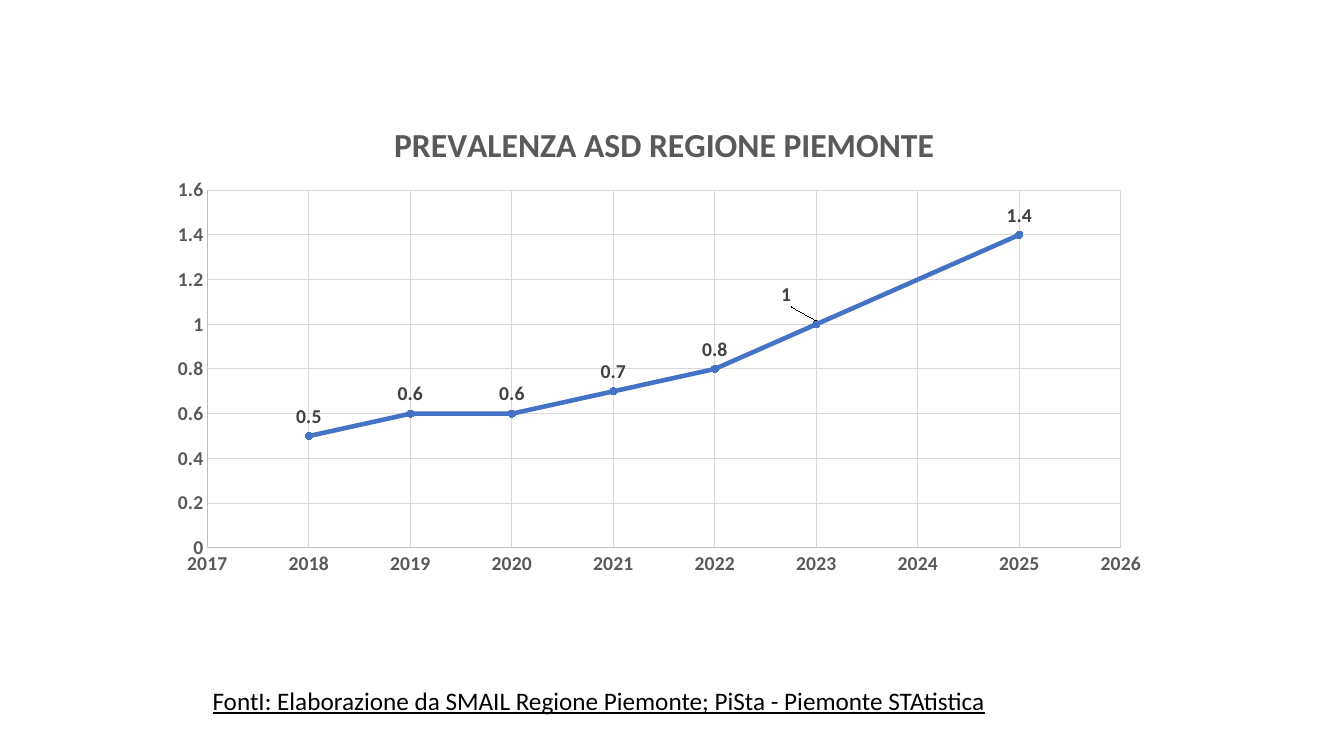
from dataclasses import dataclass

from lxml.etree import SubElement
from pptx import Presentation
from pptx.chart.data import XyChartData
from pptx.chart.datalabel import DataLabels
from pptx.dml.color import RGBColor
from pptx.enum.chart import XL_CHART_TYPE, XL_LABEL_POSITION, XL_MARKER_STYLE, XL_TICK_MARK
from pptx.enum.text import MSO_AUTO_SIZE
from pptx.oxml.ns import qn
from pptx.util import Pt


@dataclass(frozen=True)
class Theme:
    font: str = "Calibri"
    text: str = "000000"
    muted: str = "595959"
    label: str = "404040"
    accent: str = "4472C4"
    axis: str = "BFBFBF"
    grid: str = "D9D9D9"
    title_size: int = 24
    source_size: int = 18
    chart_size: int = 14


class SlideBuilder:
    def __init__(self, slide, theme):
        self.slide = slide
        self.theme = theme

    def style_font(self, font, size, color, bold=False):
        font.name = self.theme.font
        font.size = Pt(size)
        font.bold = bold
        font.color.rgb = RGBColor.from_string(color)

    def style_line(self, line, color, width=0.75):
        line.color.rgb = RGBColor.from_string(color)
        line.width = Pt(width)

    def set_layout(self, parent, index, **values):
        for old in parent.findall(qn("c:layout")):
            parent.remove(old)
        layout = SubElement(parent, qn("c:layout"))
        manual = SubElement(layout, qn("c:manualLayout"))
        for name, value in values.items():
            SubElement(manual, qn(f"c:{name}")).set("val", str(value))
        parent.insert(index, layout)

    def style_axis(self, axis, low, high, step):
        axis.minimum_scale, axis.maximum_scale, axis.major_unit = low, high, step
        axis.major_tick_mark = axis.minor_tick_mark = XL_TICK_MARK.NONE
        axis.has_major_gridlines = True
        self.style_line(axis.major_gridlines.format.line, self.theme.grid)
        self.style_line(axis.format.line, self.theme.axis)
        self.style_font(axis.tick_labels.font, self.theme.chart_size, self.theme.muted, True)

    def style_label(self, label):
        label.position = XL_LABEL_POSITION.ABOVE
        self.style_font(label.font, self.theme.chart_size, self.theme.label, True)

    def style_series(self, series):
        t = self.theme
        series.smooth = False
        self.style_line(series.format.line, t.accent, 3.25)
        marker = series.marker
        marker.style, marker.size = XL_MARKER_STYLE.CIRCLE, 5
        marker.format.fill.solid()
        marker.format.fill.fore_color.rgb = RGBColor.from_string(t.accent)
        self.style_line(marker.format.line, t.accent)
        labels = DataLabels(series._element.get_or_add_dLbls())
        labels.show_value = True
        self.style_label(labels)

    def shift_label(self, series, index, dx, dy):
        self.style_label(series.points[index].data_label)
        element = next(series._element.iter(qn("c:dLbl")))
        self.set_layout(element, 1, x=dx, y=dy)

    def scatter(self, title, points, box):
        t = self.theme
        data = XyChartData()
        values = data.add_series("Series 1")
        for year, value in points:
            values.add_data_point(year, value)
        frame = self.slide.shapes.add_chart(XL_CHART_TYPE.XY_SCATTER_LINES, *map(Pt, box), data)
        chart = frame.chart
        chart.has_legend = False
        self.style_font(chart.font, t.chart_size, t.text, True)
        chart.has_title = True
        tf = chart.chart_title.text_frame
        tf.text = title
        self.style_font(tf.paragraphs[0].runs[0].font, t.title_size, t.muted, True)
        self.set_layout(chart.chart_title._element, 1, xMode="edge", yMode="edge", x=0.23, y=0.05)
        plot = chart.plots[0]
        plot.vary_by_categories = False
        self.set_layout(plot._element.getparent(), 0, layoutTarget="inner",
                        xMode="edge", yMode="edge", x=0.05, y=0.2, w=0.91, h=0.72)
        self.style_axis(chart.category_axis, 2017, 2026, 1)
        self.style_axis(chart.value_axis, 0, 1.6, 0.2)
        series = plot.series[0]
        self.style_series(series)
        self.shift_label(series, 5, -0.03, -0.02)

    def source(self, text, box):
        tf = self.slide.shapes.add_textbox(*map(Pt, box)).text_frame
        tf.word_wrap = True
        tf.auto_size = MSO_AUTO_SIZE.SHAPE_TO_FIT_TEXT
        tf.text = text
        font = tf.paragraphs[0].runs[0].font
        self.style_font(font, self.theme.source_size, self.theme.text)
        font.underline = True


def main():
    """Build the slide on autism prevalence in Piemonte."""
    prs = Presentation()
    prs.slide_width, prs.slide_height = Pt(960), Pt(540)
    builder = SlideBuilder(prs.slides.add_slide(prs.slide_layouts[6]), Theme())
    prevalence = [(2018, 0.5), (2019, 0.6), (2020, 0.6), (2021, 0.7),
                  (2022, 0.8), (2023, 1), (2025, 1.4)]
    builder.scatter("PREVALENZA ASD REGIONE PIEMONTE", prevalence, (112.3, 64.8, 717, 355))
    builder.source("FontI: Elaborazione da SMAIL Regione Piemonte; PiSta - Piemonte STAtistica",
                   (144.7, 486, 670.3, 29))
    prs.save("out.pptx")


if __name__ == "__main__":
    main()
